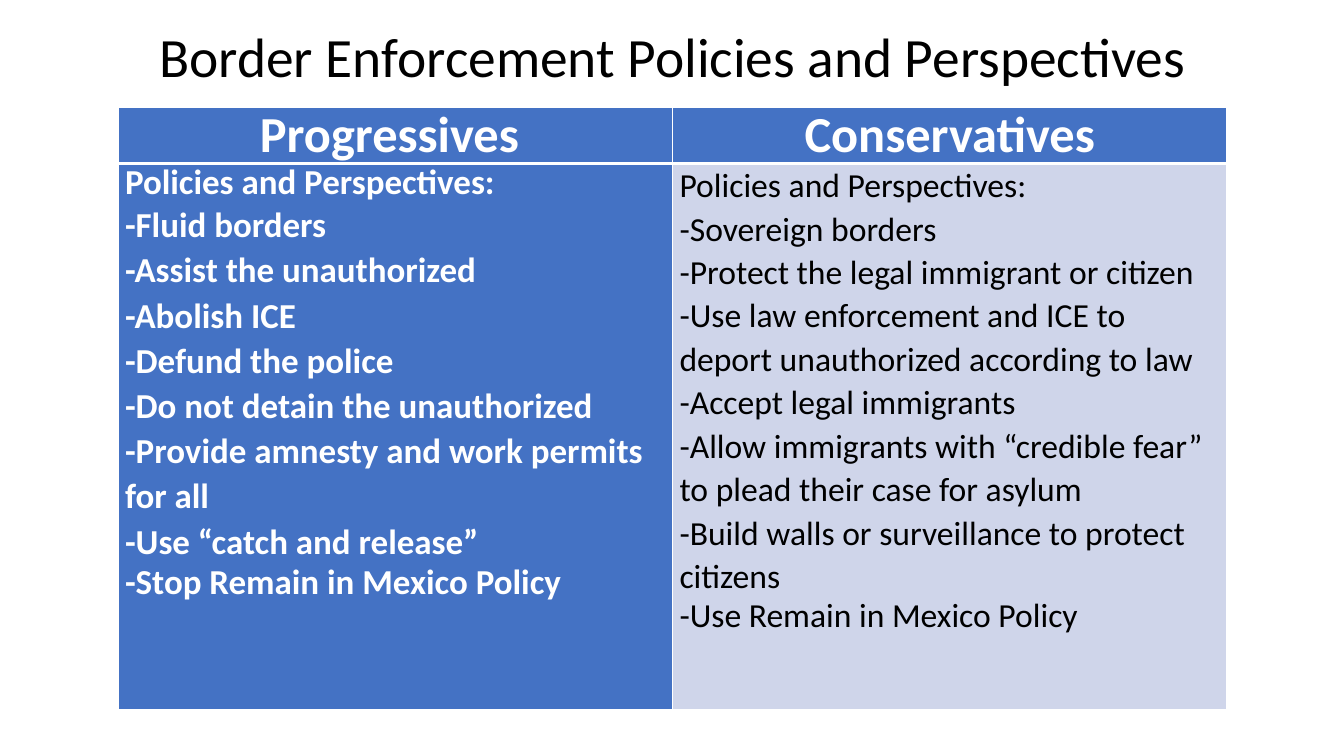
from dataclasses import dataclass

from lxml import etree
from pptx import Presentation, util as u
from pptx.dml.color import RGBColor
from pptx.enum import text
from pptx.oxml import ns

COLORS = {"blue": "4472C4", "pale": "CFD5EA", "white": "FFFFFF", "black": "000000"}
SINGLE, LOOSE = 0.9, 1.06
HEADER_HEIGHT, BODY_HEIGHT, COLUMN_WIDTH = 0.54, 5.42, 5.5


@dataclass
class Side:
    heading: str
    lines: list[str]
    size: float
    bold: bool
    ink: str
    fill: str
    first_spacing: float


SIDES = [
    Side("Progressives ", [
        "Policies and Perspectives:",
        "-Fluid borders",
        "-Assist the unauthorized",
        "-Abolish ICE",
        "-Defund the police",
        "-Do not detain the unauthorized",
        "-Provide amnesty and work permits for all",
        "-Use “catch and release”",
        "-Stop Remain in Mexico Policy",
    ], 25, True, "white", "blue", SINGLE),
    Side("Conservatives", [
        "Policies and Perspectives:",
        "-Sovereign borders",
        "-Protect the legal immigrant or citizen",
        "-Use law enforcement and ICE to deport unauthorized according to law",
        "-Accept legal immigrants",
        "-Allow immigrants with “credible fear” to plead their case for asylum",
        "-Build walls or surveillance to protect citizens",
        "-Use Remain in Mexico Policy",
    ], 24, False, "black", "pale", LOOSE),
]


def write_line(p, line: str, size: float, bold: bool, ink: str,
               spacing: float = SINGLE, align=text.PP_ALIGN.LEFT) -> None:
    p.line_spacing, p.alignment = spacing, align
    r = p.add_run()
    r.text = line
    for name, value in {"name": "Calibri", "size": u.Pt(size), "bold": bold}.items():
        setattr(r.font, name, value)
    r.font.color.rgb = RGBColor.from_string(COLORS[ink])


def format_cell(cell, fill: str, top: float, bottom: float) -> None:
    """Set margins, white borders (widths in points) and fill, in schema order."""
    margins = {"margin_left": 0.07, "margin_right": 0.07, "margin_top": 0, "margin_bottom": 0}
    for name, value in margins.items():
        setattr(cell, name, u.Inches(value))
    tc_pr = cell._tc.get_or_add_tcPr()
    for edge, width in {"lnL": 1, "lnR": 1, "lnT": top, "lnB": bottom}.items():
        ln = etree.SubElement(tc_pr, ns.qn(f"a:{edge}"), w=str(u.Pt(width)))
        solid = etree.SubElement(ln, ns.qn("a:solidFill"))
        etree.SubElement(solid, ns.qn("a:srgbClr"), val=COLORS["white"])
    cell.fill.solid()
    cell.fill.fore_color.rgb = RGBColor.from_string(COLORS[fill])


def add_title(s) -> None:
    sp = s.shapes.title
    place = {"left": 0.92, "top": 0.28, "width": 11.5, "height": 0.62}
    for name, value in place.items():
        setattr(sp, name, u.Inches(value))
    tf = sp.text_frame
    tf.word_wrap = True
    tf.auto_size = text.MSO_AUTO_SIZE.NONE
    tf.vertical_anchor = text.MSO_ANCHOR.MIDDLE
    write_line(tf.paragraphs[0], "Border Enforcement Policies and Perspectives",
               39.6, False, "black", align=text.PP_ALIGN.CENTER)


def add_comparison(s) -> None:
    table = s.shapes.add_table(
        2, len(SIDES), u.Inches(1.17), u.Inches(1.07),
        u.Inches(COLUMN_WIDTH * len(SIDES)), u.Inches(HEADER_HEIGHT + BODY_HEIGHT)).table
    table.horz_banding = False
    for row, height in zip(table.rows, (HEADER_HEIGHT, BODY_HEIGHT)):
        row.height = u.Inches(height)
    for col, side in enumerate(SIDES):
        table.columns[col].width = u.Inches(COLUMN_WIDTH)
        head, body = table.cell(0, col), table.cell(1, col)
        format_cell(head, "blue", 1, 3)
        write_line(head.text_frame.paragraphs[0], side.heading, 36, True, "white",
                   align=text.PP_ALIGN.CENTER)
        format_cell(body, side.fill, 3, 1)
        tf = body.text_frame
        last = len(side.lines) - 1
        for i, line in enumerate(side.lines):
            p = tf.add_paragraph() if i else tf.paragraphs[0]
            spacing = {0: side.first_spacing, last: SINGLE}.get(i, LOOSE)
            write_line(p, line, side.size, side.bold, side.ink, spacing)


def main() -> None:
    prs = Presentation()
    prs.slide_width, prs.slide_height = u.Inches(13.33), u.Inches(7.5)
    s = prs.slides.add_slide(prs.slide_layouts[5])
    add_title(s)
    add_comparison(s)
    prs.save("out.pptx")


if __name__ == "__main__":
    main()
